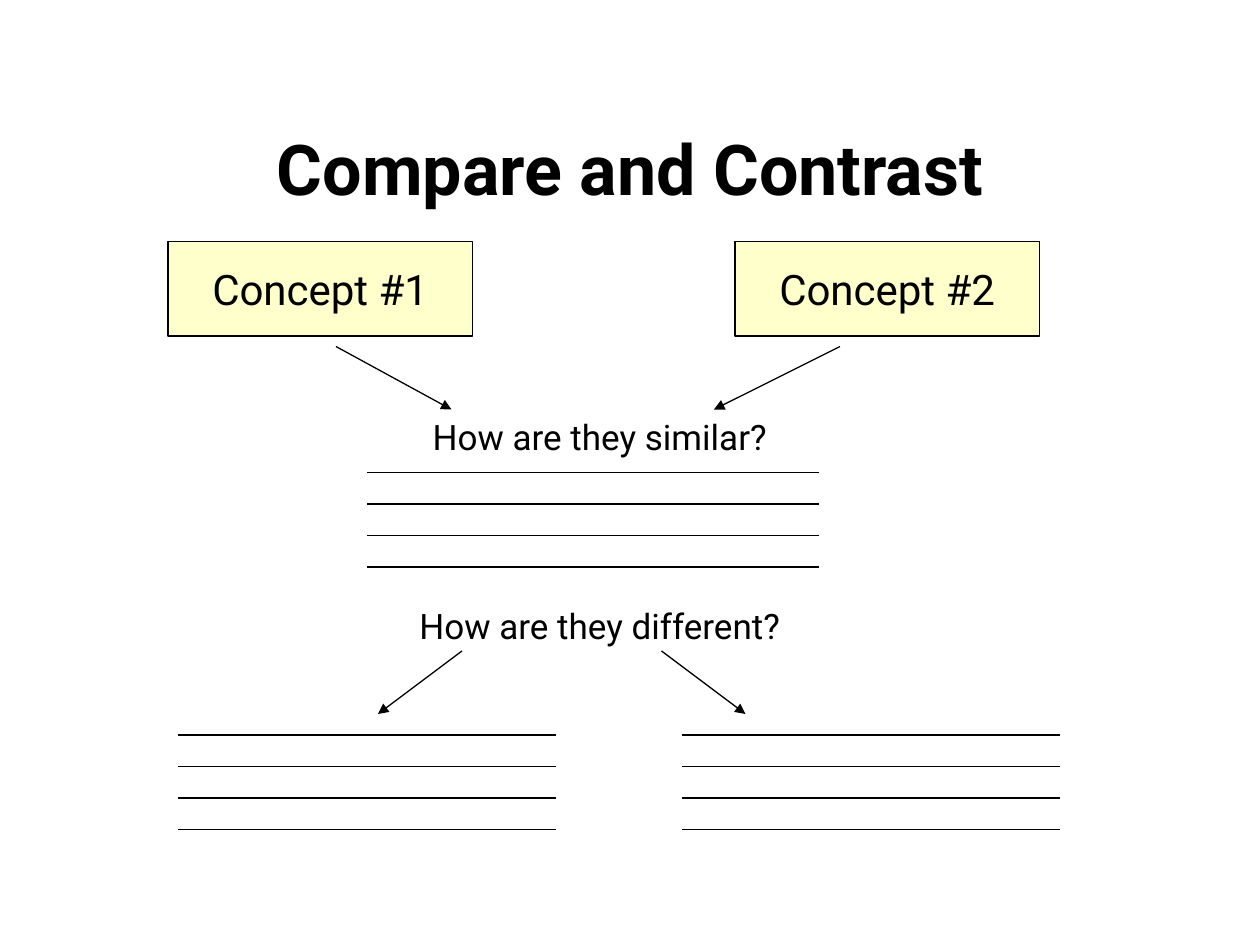
import pptx
import pptx.util
import pptx.dml.color
import pptx.enum.shapes
import pptx.enum.text
import pptx.oxml.ns
from lxml import etree

PX = 9525  # EMU per px, 96 px to the inch
WIDTH, HEIGHT = 960, 720
FONT, BLACK, CREAM = "Roboto", "000000", "FFFFCC"
MIDDLE = pptx.enum.text.MSO_ANCHOR.MIDDLE
TOP = pptx.enum.text.MSO_ANCHOR.TOP

TITLE = ("Compare and Contrast", (0, 80, WIDTH, 96))
CONCEPTS = [("Concept #1", 128), ("Concept #2", 560)]
CONCEPT_TOP, CONCEPT_W, CONCEPT_H = 184, 232, 72
QUESTIONS = [("How are they similar?", 312), ("How are they different?", 456)]
QUESTION_LEFT, QUESTION_W, QUESTION_H = 288, 338, 41
ARROWS = [
    (256, 264, 344, 312),
    (640, 264, 544, 312),
    (352, 496, 288, 544),
    (504, 496, 568, 544),
]
ANSWER_AREAS = [(280, 624, 360), (136, 424, 560), (520, 808, 560)]  # left, right, top
ANSWER_LINES, LINE_GAP = 4, 24


def px(*values):
    return [v * PX for v in values]


def color(hex_text):
    return pptx.dml.color.RGBColor.from_string(hex_text)


def write(sp, text, size, anchor=MIDDLE, bold=False, wrap=True):
    tf = sp.text_frame
    tf.word_wrap, tf.vertical_anchor = wrap, anchor
    p = tf.paragraphs[0]
    p.alignment = pptx.enum.text.PP_ALIGN.CENTER
    r = p.add_run()
    r.text = text
    font = {"name": FONT, "size": pptx.util.Pt(size), "bold": bold}
    for name, value in font.items():
        setattr(r.font, name, value)
    r.font.color.rgb = color(BLACK)


def outline(sp):
    sp.line.color.rgb = color(BLACK)
    sp.line.width = pptx.util.Pt(0.75)


def add_line(shapes, ends, arrow=False):
    line = shapes.add_connector(pptx.enum.shapes.MSO_CONNECTOR.STRAIGHT, *px(*ends))
    outline(line)
    if arrow:
        etree.SubElement(line.line._get_or_add_ln(),
                         pptx.oxml.ns.qn("a:tailEnd"), type="triangle")
    etree.SubElement(line._element.spPr, pptx.oxml.ns.qn("a:effectLst"))


prs = pptx.Presentation()
prs.slide_width, prs.slide_height = px(WIDTH, HEIGHT)
shapes = prs.slides.add_slide(prs.slide_layouts[6]).shapes

title, box = TITLE
write(shapes.add_textbox(*px(*box)), title, 40, bold=True)

for text, left in CONCEPTS:
    sp = shapes.add_shape(pptx.enum.shapes.MSO_SHAPE.RECTANGLE,
                          *px(left, CONCEPT_TOP, CONCEPT_W, CONCEPT_H))
    sp.shadow.inherit = False
    sp.fill.solid()
    sp.fill.fore_color.rgb = color(CREAM)
    outline(sp)
    write(sp, text, 24, wrap=False)

for text, top in QUESTIONS:
    sp = shapes.add_textbox(*px(QUESTION_LEFT, top, QUESTION_W, QUESTION_H))
    write(sp, text, 20, anchor=TOP)
    sp.text_frame.auto_size = pptx.enum.text.MSO_AUTO_SIZE.SHAPE_TO_FIT_TEXT

for ends in ARROWS:
    add_line(shapes, ends, arrow=True)

for left, right, top in ANSWER_AREAS:
    group = shapes.add_group_shape()
    for i in range(ANSWER_LINES):
        y = top + i * LINE_GAP
        add_line(group.shapes, (left, y, right, y))

prs.save("out.pptx")
